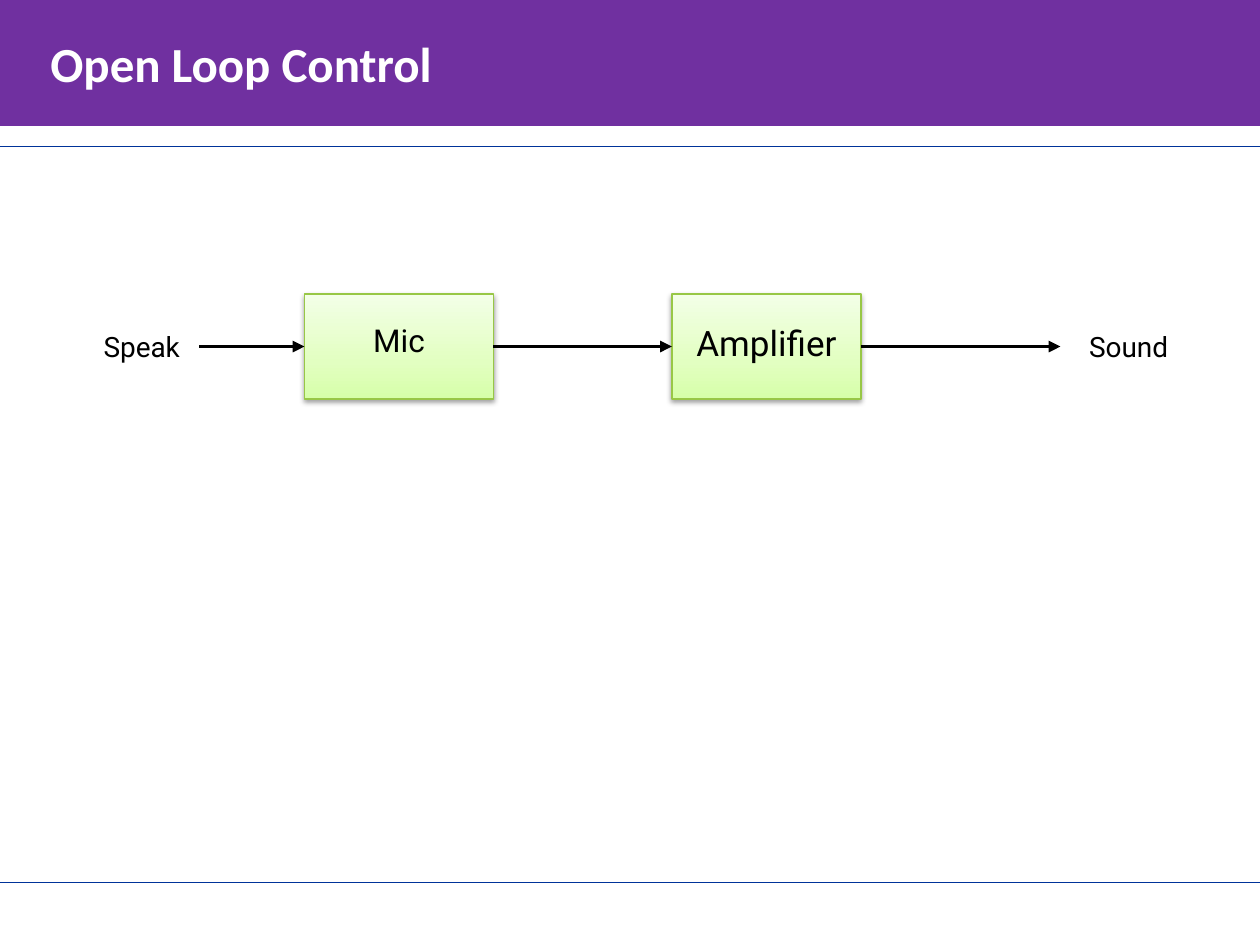
"""Build the open loop control slide: a speak-to-sound block chain."""
import dataclasses

import lxml.etree
import pptx
import pptx.dml.color
import pptx.enum.shapes
import pptx.enum.text
import pptx.oxml
import pptx.oxml.ns
import pptx.util

Pt = pptx.util.Pt
qn = pptx.oxml.ns.qn
Align = pptx.enum.text.PP_ALIGN
Anchor = pptx.enum.text.MSO_ANCHOR


@dataclasses.dataclass(frozen=True)
class Theme:
    banner: str = "7030A0"
    banner_text: str = "FFFFFF"
    rule: str = "003399"
    ink: str = "000000"
    block_edge: str = "98C746"
    block_stops: tuple = ((0, "D6FFA8"), (35, "E2FFC1"), (100, "F3FFE7"))
    title_font: str = "Calibri"
    label_font: str = "Roboto"
    title_size: float = 28
    outer_size: float = 16
    mic_size: float = 18
    amplifier_size: float = 20


THEME = Theme()
WIDTH, HEIGHT = 720, 540
AXIS = 198
BLOCK_TOP, BLOCK_WIDTH, BLOCK_HEIGHT = 168, 108, 60
MIC_LEFT, AMPLIFIER_LEFT = 174, 384


def rgb(value):
    return pptx.dml.color.RGBColor.from_string(value)


def apply(target, formats):
    for name, value in formats.items():
        setattr(target, name, value)


def style_text(frame, text, align, font, size, color, bold=False):
    frame.text = text
    para = frame.paragraphs[0]
    para.alignment = align
    span = para.runs[0]
    apply(span.font, {"name": font, "size": Pt(size), "bold": bold})
    span.font.color.rgb = rgb(color)


def add_title(page, text):
    box = page.shapes.title
    apply(box, {"left": 0, "top": 0, "width": Pt(WIDTH), "height": Pt(72)})
    box.fill.solid()
    box.fill.fore_color.rgb = rgb(THEME.banner)
    apply(box.text_frame, {
        "margin_left": Pt(28.8), "vertical_anchor": Anchor.MIDDLE,
        "auto_size": pptx.enum.text.MSO_AUTO_SIZE.NONE,
    })
    style_text(box.text_frame, text, Align.LEFT, THEME.title_font,
               THEME.title_size, THEME.banner_text, bold=True)


def add_line(page, start, end, y, color, weight, arrow=False):
    line = page.shapes.add_connector(
        pptx.enum.shapes.MSO_CONNECTOR.STRAIGHT, Pt(start), Pt(y), Pt(end), Pt(y))
    line.line.color.rgb = rgb(color)
    line.line.width = Pt(weight)
    properties = line._element.spPr
    if arrow:
        lxml.etree.SubElement(properties.find(qn("a:ln")), qn("a:tailEnd"), type="triangle")
    lxml.etree.SubElement(properties, qn("a:effectLst"))


def add_block(page, left):
    block = page.shapes.add_shape(
        pptx.enum.shapes.MSO_SHAPE.RECTANGLE,
        Pt(left), Pt(BLOCK_TOP), Pt(BLOCK_WIDTH), Pt(BLOCK_HEIGHT))
    block.shadow.inherit = False
    block.line.color.rgb = rgb(THEME.block_edge)
    block.line.width = Pt(0.75)
    namespace = pptx.oxml.ns.nsdecls("a")
    stops = "".join(
        f'<a:gs pos="{place * 1000}"><a:srgbClr val="{color}"/></a:gs>'
        for place, color in THEME.block_stops)
    properties = block._element.spPr
    properties.find(qn("a:ln")).addprevious(pptx.oxml.parse_xml(
        f'<a:gradFill {namespace} rotWithShape="1"><a:gsLst>{stops}</a:gsLst>'
        '<a:lin ang="16200000" scaled="0"/></a:gradFill>'))
    properties.find(qn("a:effectLst")).append(pptx.oxml.parse_xml(
        f'<a:outerShdw {namespace} blurRad="{Pt(3.1)}" dist="{Pt(1.6)}" dir="5400000" '
        f'rotWithShape="0"><a:srgbClr val="{THEME.ink}"><a:alpha val="38000"/>'
        '</a:srgbClr></a:outerShdw>'))


def add_label(page, text, left, top, width, height, size):
    box = page.shapes.add_textbox(Pt(left), Pt(top), Pt(width), Pt(height))
    box.text_frame.word_wrap = True
    style_text(box.text_frame, text, Align.CENTER, THEME.label_font, size, THEME.ink)


def main():
    deck = pptx.Presentation()
    apply(deck, {"slide_width": Pt(WIDTH), "slide_height": Pt(HEIGHT)})
    page = deck.slides.add_slide(deck.slide_layouts.get_by_name("Title Only"))
    for y in (83.5, 504):
        add_line(page, 0, WIDTH, y, THEME.rule, 0.5)
    add_title(page, "Open Loop Control")
    for left in (MIC_LEFT, AMPLIFIER_LEFT):
        add_block(page, left)
    for label in (
        ("Speak", 39, 184.5, 84, 26.6, THEME.outer_size),
        ("Mic", MIC_LEFT + 6, 180, 96, 29, THEME.mic_size),
        ("Amplifier", AMPLIFIER_LEFT + 6, 180, 96, 31.5, THEME.amplifier_size),
        ("Sound", 606, 184.5, 78, 26.6, THEME.outer_size),
    ):
        add_label(page, *label)
    for start, end in (
        (114, MIC_LEFT),
        (MIC_LEFT + BLOCK_WIDTH, AMPLIFIER_LEFT),
        (AMPLIFIER_LEFT + BLOCK_WIDTH, 606),
    ):
        add_line(page, start, end, AXIS, THEME.ink, 2.25, arrow=True)
    deck.save("out.pptx")


if __name__ == "__main__":
    main()
